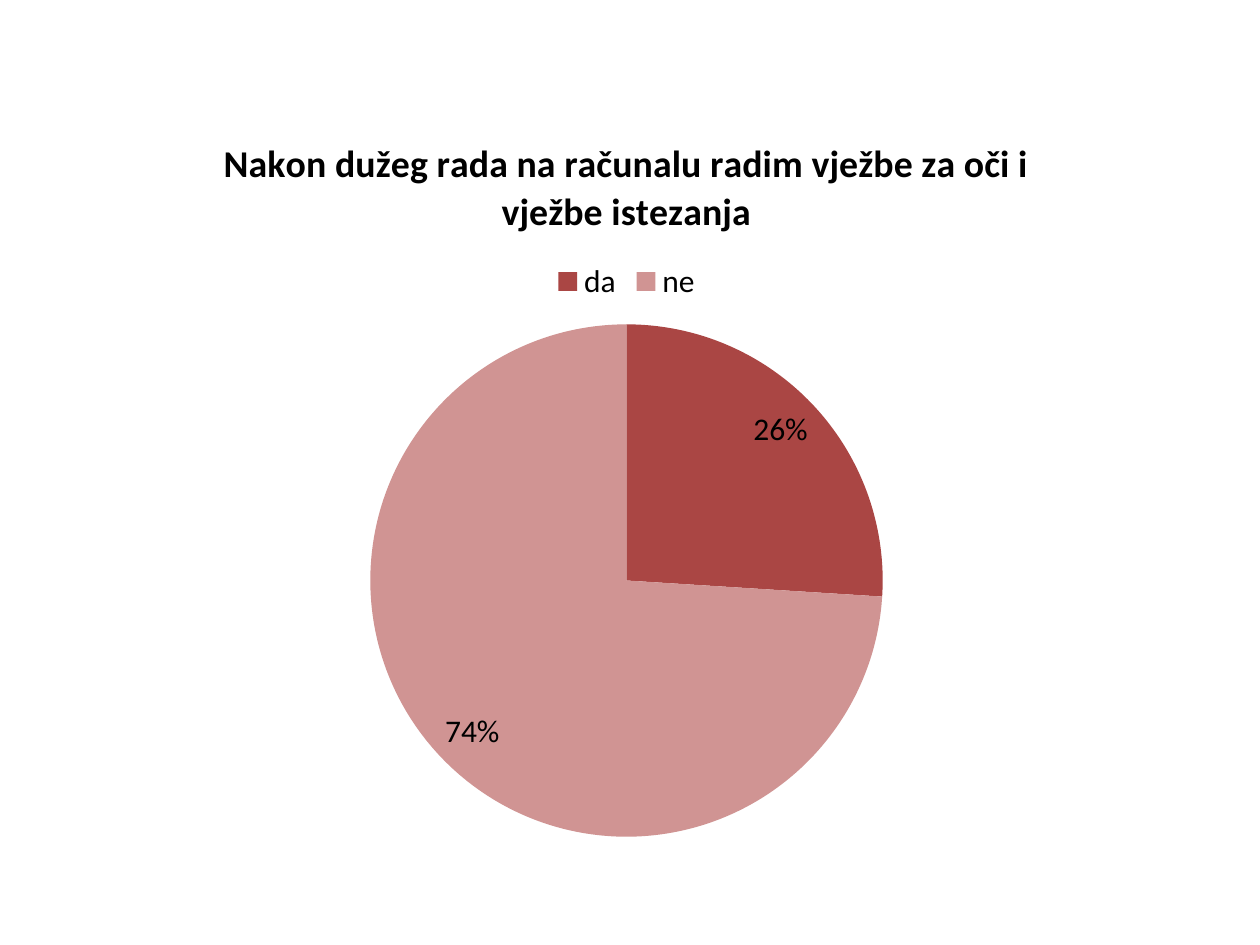
import pptx
import pptx.chart.data
import pptx.dml.color
import pptx.enum.chart
import pptx.util

Cm = pptx.util.Cm
QUESTION = "Nakon dužeg rada na računalu radim vježbe za oči i vježbe istezanja"


def color(hex_string):
    return pptx.dml.color.RGBColor.from_string(hex_string)


class SurveySlide:
    font_name = "Calibri"
    text_color = "000000"
    text_size = 18
    title_size = 21.6

    def __init__(self, presentation):
        self.slide = presentation.slides.add_slide(presentation.slide_layouts[6])

    def style(self, font, size, bold=False):
        font.name = self.font_name
        font.size = pptx.util.Pt(size)
        font.bold = bold
        font.color.rgb = color(self.text_color)

    def pie(self, question, answers, left, top, width, height):
        """answers maps each answer to its (percentage, slice colour)."""
        data = pptx.chart.data.CategoryChartData()
        data.categories = list(answers)
        data.add_series(question, [share for share, _ in answers.values()])
        chart = self.slide.shapes.add_chart(
            pptx.enum.chart.XL_CHART_TYPE.PIE, left, top, width, height, data
        ).chart
        self.style(chart.font, self.text_size)

        # Question as chart title
        chart.has_title = True
        heading = chart.chart_title.text_frame
        heading.text = question
        self.style(heading.paragraphs[0].runs[0].font, self.title_size, bold=True)
        chart.chart_title.include_in_layout = False

        # Legend between title and pie
        chart.has_legend = True
        chart.legend.position = pptx.enum.chart.XL_LEGEND_POSITION.TOP
        chart.legend.include_in_layout = False
        self.style(chart.legend.font, self.text_size)

        # Slices
        plot = chart.plots[0]
        plot.vary_by_categories = True
        for index, (_, slice_color) in enumerate(answers.values()):
            fill = plot.series[0].points[index].format.fill
            fill.solid()
            fill.fore_color.rgb = color(slice_color)

        # Percentages
        labels = plot.series[0].data_labels
        labels.show_percentage = True
        labels.show_value = False
        labels.number_format = "0%"
        labels.number_format_is_linked = False
        labels.position = pptx.enum.chart.XL_LABEL_POSITION.INSIDE_END
        self.style(labels.font, self.text_size)


def main():
    presentation = pptx.Presentation()
    presentation.slide_width = Cm(25.4)
    presentation.slide_height = Cm(19.05)

    survey = SurveySlide(presentation)
    survey.pie(
        QUESTION,
        {"da": (26, "AA4644"), "ne": (74, "D09493")},
        Cm(1.2), Cm(2.18), Cm(22.86), Cm(15.04),
    )
    presentation.save("out.pptx")


if __name__ == "__main__":
    main()
